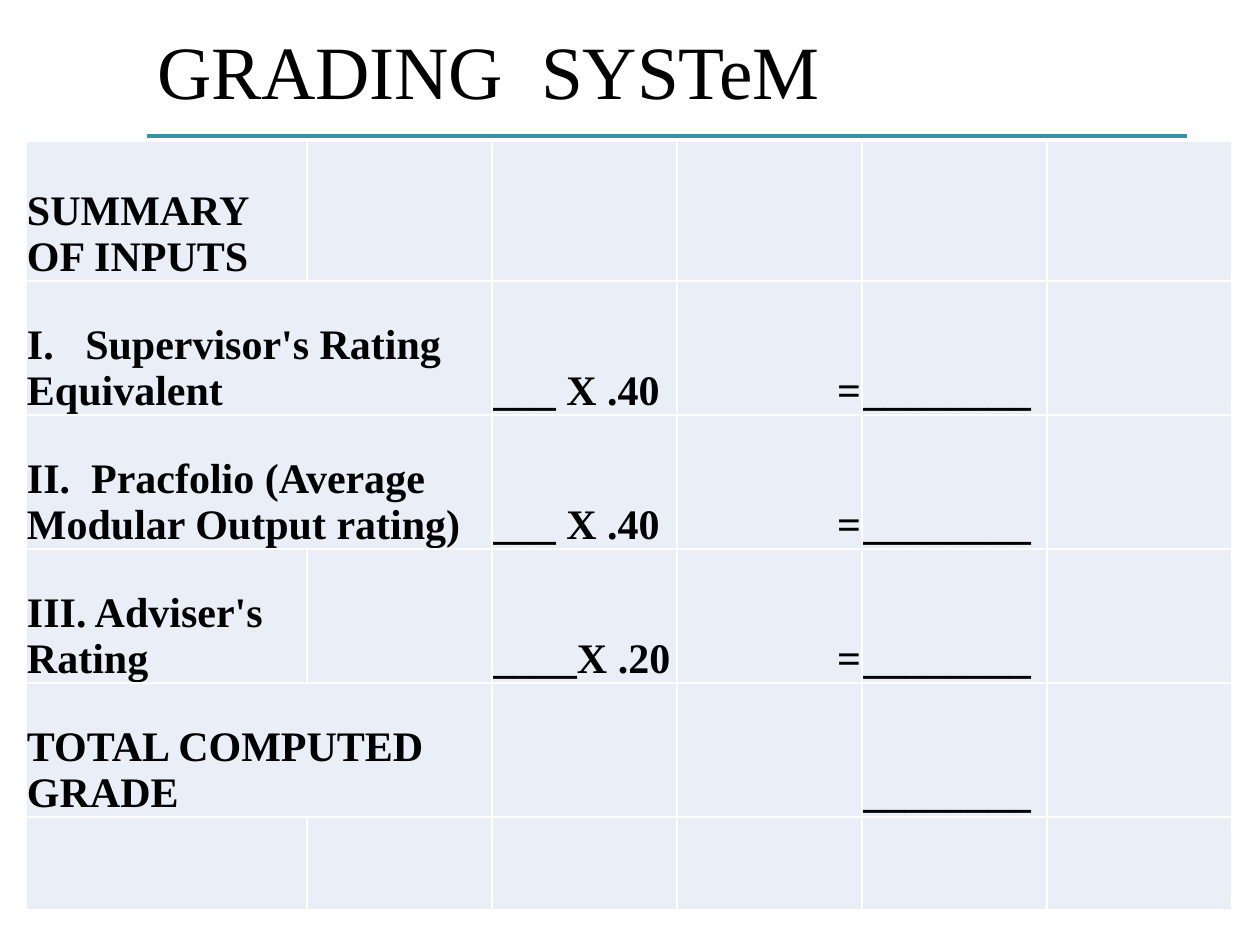
from dataclasses import dataclass

from lxml import etree
from pptx import Presentation
from pptx import util as u
from pptx.dml.color import RGBColor
from pptx.enum import shapes, text
from pptx.oxml.ns import qn


@dataclass(frozen=True)
class Theme:
    """Colours, type sizes and font of the slide."""
    font: str = "Times New Roman"
    ink: str = "000000"
    rule: str = "3891A7"
    cell: str = "EAEFF7"
    edge: str = "FFFFFF"
    title: int = 43
    body: int = 24


THEME = Theme()
TITLE = [("GRADIN", -10), ("G\tS", 0), ("Y", -80), ("STeM", 0)]
COLS = [281] + [185] * 5
ROWS = [140] + [134] * 4 + [93]
LINE = "________"
GRADES = [
    ["SUMMARY OF INPUTS"],
    ["I.   Supervisor's Rating Equivalent", "", "___ X .40", "=", LINE],
    ["II.  Pracfolio (Average Modular Output rating)", "", "___ X .40", "=", LINE],
    ["III. Adviser's Rating", "", "____X .20", "=", LINE],
    ["TOTAL COMPUTED GRADE", "", "", "", LINE],
    [],
]
WIDE = (1, 2, 4)


def px(n):
    """Turn pixels into EMU."""
    return u.Emu(round(n * 914400 / 126))


def rgb(code):
    """Turn a hex code into a colour."""
    return RGBColor.from_string(code)


def put(obj, **vals):
    """Set format values on an object."""
    for key, val in vals.items():
        setattr(obj, key, val)


def style(font, size, bold=False):
    """Give a font the theme's face and ink."""
    put(font, name=THEME.font, size=u.Pt(size), bold=bold)
    font.color.rgb = rgb(THEME.ink)


def head(slide):
    """Add the title with its tab stop and letter spacing."""
    box = slide.shapes.add_textbox(px(156), px(30), px(723), px(91))
    frame = box.text_frame
    put(frame, margin_left=0, margin_right=0, margin_top=0, margin_bottom=0,
        word_wrap=True, vertical_anchor=text.MSO_ANCHOR.MIDDLE,
        auto_size=text.MSO_AUTO_SIZE.SHAPE_TO_FIT_TEXT)
    para = frame.paragraphs[0]
    para.line_spacing = 0.9
    props = para._p.get_or_add_pPr()
    props.set("marL", str(px(1)))
    tabs = etree.SubElement(props, qn("a:tabLst"))
    etree.SubElement(tabs, qn("a:tab"), pos=str(px(384)), algn="l")
    for words, gap in TITLE:
        run = para.add_run()
        run.text = words
        style(run.font, THEME.title)
        run._r.get_or_add_rPr().set("spc", str(gap))


def rule(slide):
    """Add the line below the title."""
    line = slide.shapes.add_connector(
        shapes.MSO_CONNECTOR.STRAIGHT, px(147), px(136), px(1187), px(136))
    line.line.color.rgb = rgb(THEME.rule)
    line.line.width = u.Pt(2.25)
    etree.SubElement(line._element.spPr, qn("a:effectLst"))


def edge(cell):
    """Draw the four borders of a cell."""
    props = cell._tc.get_or_add_tcPr()
    for side in "LRTB":
        line = etree.SubElement(props, qn(f"a:ln{side}"), w=str(u.Pt(1)))
        fill = etree.SubElement(line, qn("a:solidFill"))
        etree.SubElement(fill, qn("a:srgbClr"), val=THEME.edge)


def fill(cell, words):
    """Format one cell and write its words."""
    edge(cell)
    cell.fill.solid()
    cell.fill.fore_color.rgb = rgb(THEME.cell)
    put(cell, margin_left=px(1), margin_right=px(1), margin_top=px(1),
        margin_bottom=0, vertical_anchor=text.MSO_ANCHOR.BOTTOM)
    if words:
        para = cell.text_frame.paragraphs[0]
        run = para.add_run()
        run.text = words
        style(run.font, THEME.body, True)
        if words == "=":
            para.alignment = text.PP_ALIGN.RIGHT


def grid(slide):
    """Add the table of grades."""
    table = slide.shapes.add_table(
        len(ROWS), len(COLS), px(26), px(141), px(sum(COLS)), px(sum(ROWS))).table
    put(table, first_row=False, horz_banding=False)
    for col, wide in zip(table.columns, COLS):
        col.width = px(wide)
    for row, high, words in zip(table.rows, ROWS, GRADES):
        row.height = px(high)
        for i, cell in enumerate(row.cells):
            fill(cell, words[i] if i < len(words) else "")
    for i in WIDE:
        table.cell(i, 0).merge(table.cell(i, 1))


def main():
    """Build and save the slide."""
    deck = Presentation()
    put(deck, slide_width=px(1260), slide_height=px(945))
    slide = deck.slides.add_slide(deck.slide_layouts[6])
    rule(slide)
    head(slide)
    grid(slide)
    deck.save("out.pptx")


if __name__ == "__main__":
    main()
